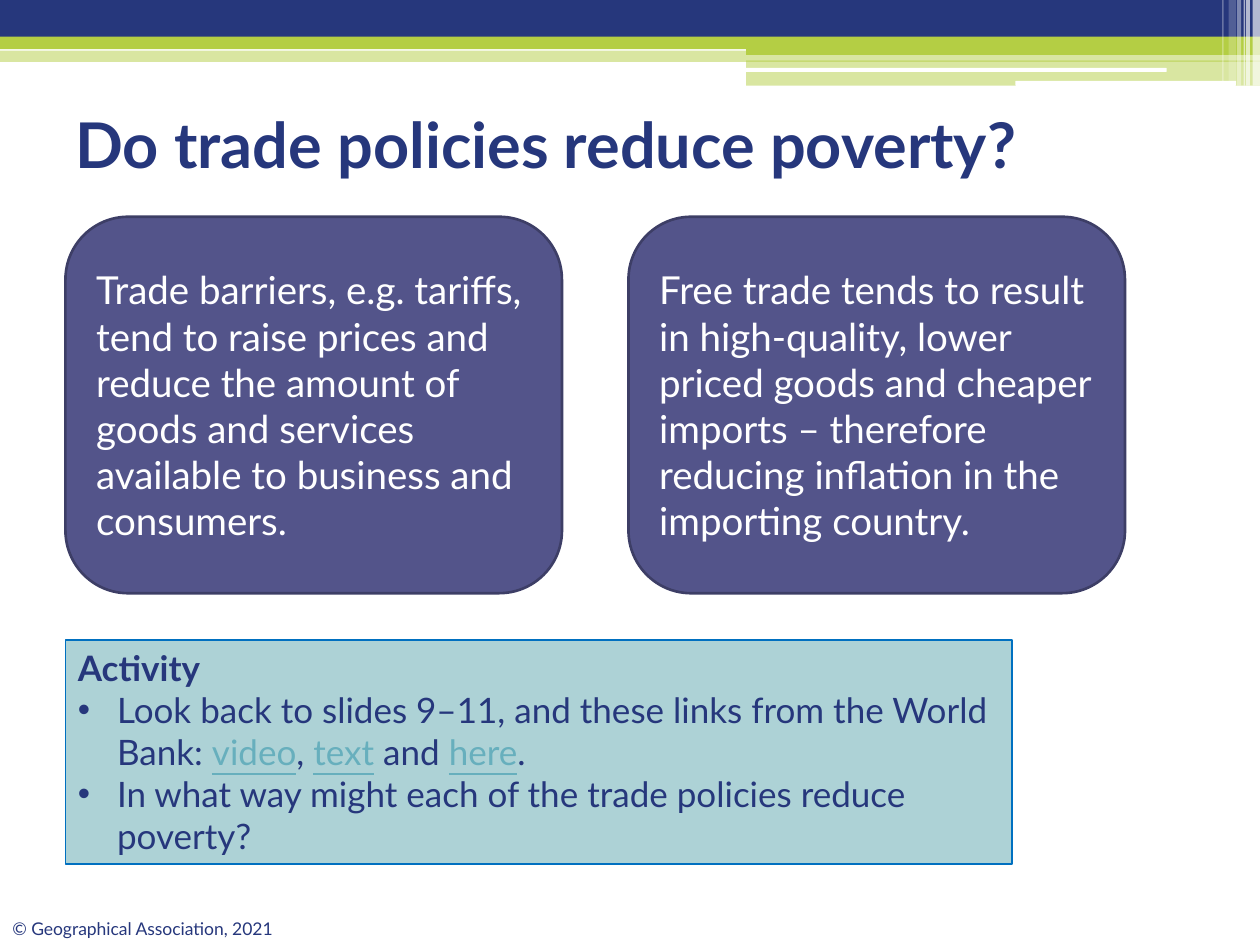
from lxml import etree
from pptx import Presentation
from pptx.dml.color import RGBColor
from pptx.enum.shapes import MSO_SHAPE
from pptx.enum.text import MSO_ANCHOR, PP_ALIGN
from pptx.oxml.ns import qn
from pptx.util import Cm, Pt

NAVY, LIME, WHITE = "26377C", "B4CE44", "FFFFFF"
CARD, CARD_EDGE = "53548A", "3D3E66"
PANEL, PANEL_EDGE, LINK = "ADD2D6", "0070C0", "67AFBD"
SLIDE_WIDTH, SLIDE_HEIGHT = 25.4, 19.05

# left, top, width, height in cm, colour, opacity in percent
BANDS = [
    (0, 1.02, SLIDE_WIDTH, 0.23, LIME, 50),
    (0, 0, SLIDE_WIDTH, 0.86, NAVY, 100),
    (0, 0.74, SLIDE_WIDTH, 0.25, LIME, 100),
    (15.04, 0.86, 10.36, 0.25, LIME, 100),
    (15.04, 1.22, 10.36, 0.51, LIME, 50),
]
GAPS = [(15.01, 1.37, 8.51, 0.08), (20.47, 1.63, 4.45, 0.1)]
# left, width, height in cm, opacity in percent
STRIPES = [
    (25.25, 0.15, 1.73, 65),
    (25.12, 0.08, 1.73, 65),
    (25.07, 0.03, 1.73, 60),
    (24.94, 0.08, 1.73, 40),
    (24.77, 0.15, 1.63, 20),
    (24.64, 0.03, 1.63, 30),
]

CARD_LEFT, CARD_STEP = 1.32, 11.35
CARD_TEXTS = [
    "Trade barriers, e.g. tariffs, tend to raise prices and reduce the amount of "
    "goods and services available to business and consumers.",
    "Free trade tends to result in high-quality, lower priced goods and cheaper "
    "imports – therefore reducing inflation in the importing country.",
]

LINK_FORMAT = {"color": LINK, "underline": True}
TASKS = [
    [
        ("Look back to slides 9–11, and these links from the World Bank: ", {}),
        ("video", LINK_FORMAT),
        (", ", {}),
        ("text", LINK_FORMAT),
        (" and ", {}),
        ("here", LINK_FORMAT),
        (".", {}),
    ],
    [("In what way might each of the trade policies reduce poverty?", {})],
]


def rgb(hex_colour):
    return RGBColor.from_string(hex_colour)


def add_block(slide, kind, box, fill, opacity=100, edge=None, edge_width=0.75):
    block = slide.shapes.add_shape(kind, *map(Cm, box))
    block.shadow.inherit = False
    block.fill.solid()
    block.fill.fore_color.rgb = rgb(fill)
    if opacity < 100:
        colour = block.fill._xPr.find(f"{qn('a:solidFill')}/{qn('a:srgbClr')}")
        etree.SubElement(colour, qn("a:alpha"), val=str(opacity * 1000))
    if edge:
        block.line.color.rgb = rgb(edge)
        block.line.width = Pt(edge_width)
    else:
        block.line.fill.background()
    return block


def prepare_frame(shape, anchor):
    frame = shape.text_frame
    frame.word_wrap = True
    frame.vertical_anchor = anchor
    return frame


def write_runs(paragraph, runs, size):
    paragraph.alignment = PP_ALIGN.LEFT
    for text, changes in runs:
        run = paragraph.add_run()
        run.text = text
        look = {"name": "Lato", "size": Pt(size), "color": NAVY} | changes
        run.font.color.rgb = rgb(look.pop("color"))
        for attribute, value in look.items():
            setattr(run.font, attribute, value)


def add_label(slide, box, text, size, anchor, **changes):
    frame = prepare_frame(slide.shapes.add_textbox(*map(Cm, box)), anchor)
    write_runs(frame.paragraphs[0], [(text, changes)], size)


def set_bullet(paragraph):
    properties = paragraph._p.get_or_add_pPr()
    indent = Cm(0.79)
    properties.set("marL", str(indent))
    properties.set("indent", str(-indent))
    etree.SubElement(properties, qn("a:buFont"), typeface="Arial")
    etree.SubElement(properties, qn("a:buChar"), char="•")


def add_header(slide):
    for *box, colour, opacity in BANDS:
        add_block(slide, MSO_SHAPE.RECTANGLE, box, colour, opacity)
    for box in GAPS:
        add_block(slide, MSO_SHAPE.ROUNDED_RECTANGLE, box, WHITE)
    for left, width, height, opacity in STRIPES:
        add_block(slide, MSO_SHAPE.RECTANGLE, (left, 0, width, height), WHITE, opacity)


def add_card(slide, left, text):
    card = add_block(slide, MSO_SHAPE.ROUNDED_RECTANGLE, (left, 4.37, 10.01, 7.59),
                     CARD, edge=CARD_EDGE, edge_width=1.5)
    frame = prepare_frame(card, MSO_ANCHOR.MIDDLE)
    write_runs(frame.paragraphs[0], [(text, {"color": WHITE})], 22)


def add_activity(slide):
    panel = add_block(slide, MSO_SHAPE.RECTANGLE, (1.32, 12.9, 19.08, 4.52),
                      PANEL, edge=PANEL_EDGE)
    frame = prepare_frame(panel, MSO_ANCHOR.TOP)
    write_runs(frame.paragraphs[0], [("Activity", {"bold": True})], 20)
    for runs in TASKS:
        task = frame.add_paragraph()
        set_bullet(task)
        write_runs(task, runs, 20)


def main():
    deck = Presentation()
    deck.slide_width, deck.slide_height = Cm(SLIDE_WIDTH), Cm(SLIDE_HEIGHT)
    slide = deck.slides.add_slide(deck.slide_layouts[6])
    add_header(slide)
    add_label(slide, (0, 18.39, 7.29, 0.69), "© Geographical Association, 2021",
              10, MSO_ANCHOR.TOP)
    add_label(slide, (1.27, 1.4, 22.86, 2.97), "Do trade policies reduce poverty?",
              36, MSO_ANCHOR.MIDDLE, bold=True)
    for column, text in enumerate(CARD_TEXTS):
        add_card(slide, CARD_LEFT + column * CARD_STEP, text)
    add_activity(slide)
    deck.save("out.pptx")


if __name__ == "__main__":
    main()
